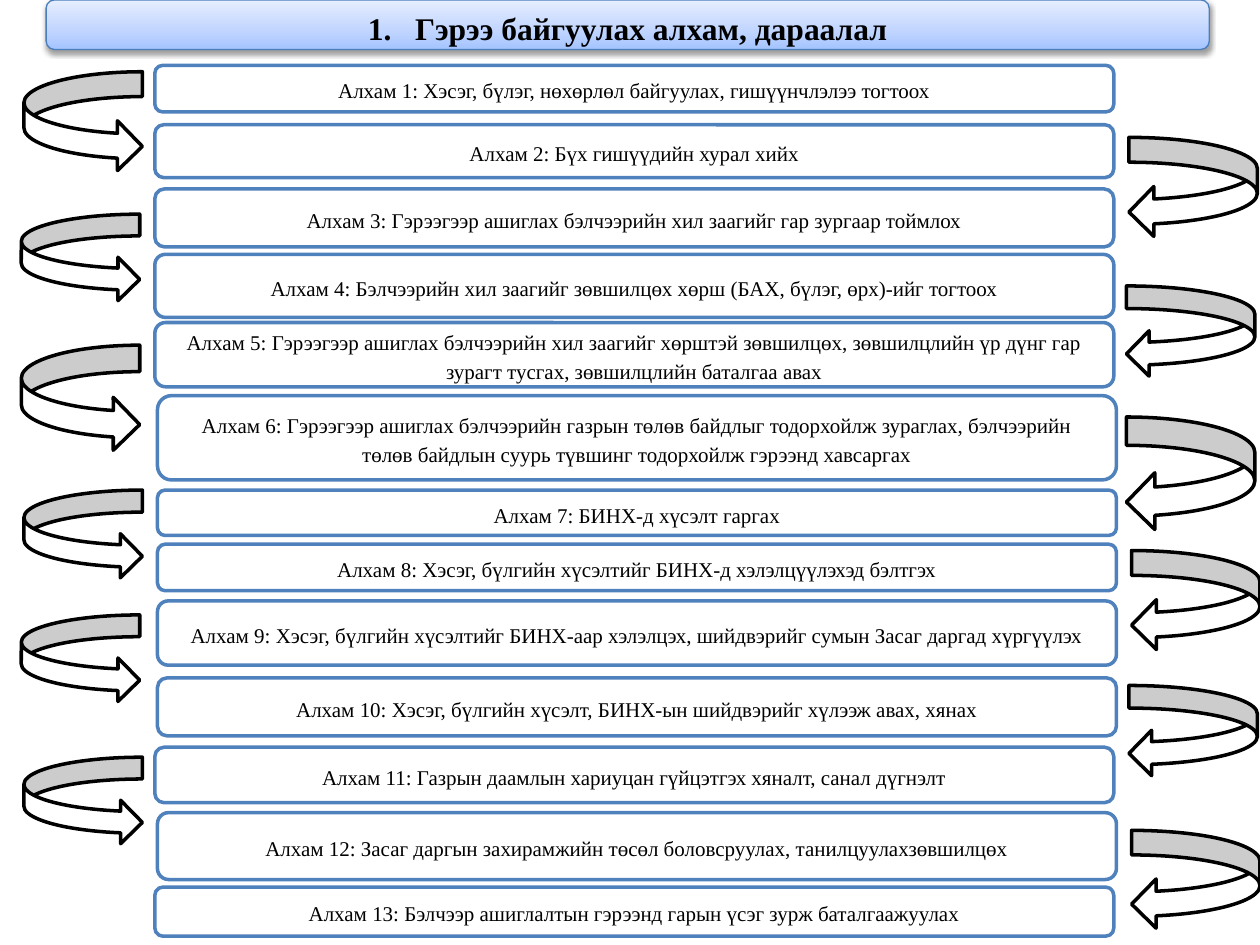
"""Build a slide with the thirteen steps of making a contract."""
from copy import deepcopy
from lxml.etree import SubElement
from pptx import Presentation
from pptx.dml.color import RGBColor
from pptx.enum.shapes import MSO_SHAPE
from pptx.enum.text import MSO_ANCHOR, PP_ALIGN
from pptx.oxml.ns import qn
from pptx.util import Pt

BLACK = RGBColor(0x00, 0x00, 0x00)
WHITE = RGBColor(0xFF, 0xFF, 0xFF)
STEP_BLUE = RGBColor(0x4F, 0x81, 0xBD)
TITLE_BLUE = RGBColor(0x4B, 0x7E, 0xBC)
TITLE_STOPS = [
    (0, RGBColor(0xA4, 0xC4, 0xFF)),
    (0.35, RGBColor(0xBF, 0xD4, 0xFF)),
    (1, RGBColor(0xE6, 0xEE, 0xFF)),
]

OUTER, INNER = 88.5, 90
STEP_WIDTH = 548
STEPS = [
    (OUTER, 37.4, 26.6, "Хэсэг, бүлэг, нөхөрлөл байгуулах, гишүүнчлэлээ тогтоох"),
    (OUTER, 71.3, 30.2, "Бүх гишүүдийн хурал хийх"),
    (OUTER, 108, 33.1, "Гэрээгээр ашиглах бэлчээрийн хил заагийг гар зургаар тоймлох"),
    (OUTER, 145.4, 36, "Бэлчээрийн хил заагийг зөвшилцөх хөрш (БАХ, бүлэг, өрх)-ийг тогтоох"),
    (OUTER, 184.3, 36.7, "Гэрээгээр ашиглах бэлчээрийн хил заагийг хөрштэй зөвшилцөх, "
     "зөвшилцлийн үр дүнг гар зурагт тусгах, зөвшилцлийн баталгаа авах"),
    (INNER, 226.1, 48.2, "Гэрээгээр ашиглах бэлчээрийн газрын төлөв байдлыг тодорхойлж зураглах, "
     "бэлчээрийн төлөв байдлын суурь түвшинг тодорхойлж гэрээнд хавсаргах"),
    (INNER, 280.1, 25.9, "БИНХ-д хүсэлт гаргах"),
    (INNER, 311, 26.6, "Хэсэг, бүлгийн хүсэлтийг БИНХ-д хэлэлцүүлэхэд бэлтгэх"),
    (INNER, 343.4, 36.7, "Хэсэг, бүлгийн хүсэлтийг БИНХ-аар хэлэлцэх, "
     "шийдвэрийг сумын Засаг даргад хүргүүлэх"),
    (INNER, 387.4, 33.1, "Хэсэг, бүлгийн хүсэлт, БИНХ-ын шийдвэрийг хүлээж авах, хянах"),
    (OUTER, 427, 31.7, "Газрын даамлын хариуцан гүйцэтгэх хяналт, санал дүгнэлт"),
    (INNER, 464.4, 38.2, "Засаг даргын захирамжийн төсөл боловсруулах, танилцуулахзөвшилцөх"),
    (OUTER, 506.9, 28.1, "Бэлчээр ашиглалтын гэрээнд гарын үсэг зурж баталгаажуулах"),
]
ARROWS = {
    (MSO_SHAPE.CURVED_RIGHT_ARROW, 67.7): [
        (13.7, 41, 56.9), (12.2, 122.4, 49.7), (12.2, 197.3, 60.5),
        (13.7, 280.1, 50.4), (12.2, 351.4, 49.7), (13.7, 432.7, 49.7),
    ],
    (MSO_SHAPE.CURVED_LEFT_ARROW, 73.4): [
        (645.1, 78.5, 56.9), (643.7, 163.4, 51.8), (643.7, 238.3, 64.8),
        (646.6, 314.6, 56.9), (645.1, 391.7, 51.8), (646.6, 474.5, 56.2),
    ],
}

deck = Presentation()
deck.slide_width, deck.slide_height = Pt(720), Pt(540)
page = deck.slides.add_slide(deck.slide_layouts[6])


def add_box(kind, left, top, width, height, line_color, line_width):
    box = page.shapes.add_shape(kind, Pt(left), Pt(top), Pt(width), Pt(height))
    box.shadow.inherit = False
    box.fill.solid()
    box.fill.fore_color.rgb = WHITE
    box.line.color.rgb = line_color
    box.line.width = Pt(line_width)
    return box


def write(box, text, size, bold=False):
    frame = box.text_frame
    frame.word_wrap = True
    frame.vertical_anchor = MSO_ANCHOR.MIDDLE
    para = frame.paragraphs[0]
    para.text = text
    para.alignment = PP_ALIGN.CENTER
    para.line_spacing = 1.15
    para.space_after = Pt(10)
    font = para.runs[0].font
    font.name, font.size, font.bold = "Times New Roman", Pt(size), bold
    font.color.rgb = BLACK
    return para


title = add_box(MSO_SHAPE.ROUNDED_RECTANGLE, 26.4, 0, 664.6, 28.3, TITLE_BLUE, 0.75)
title.fill.gradient()
title.fill.gradient_angle = 90
stop_list = title._element.spPr.find(qn("a:gradFill")).find(qn("a:gsLst"))
stop_list.insert(1, deepcopy(stop_list[0]))
for stop, (position, color) in zip(title.fill.gradient_stops, TITLE_STOPS):
    stop.position = position
    stop.color.rgb = color

effects = title._element.spPr.find(qn("a:effectLst"))
shadow = SubElement(effects, qn("a:outerShdw"), blurRad=str(Pt(3.1)), dist=str(Pt(1.6)),
                    dir="5400000", rotWithShape="0")
shadow_color = SubElement(shadow, qn("a:srgbClr"), val=str(BLACK))
SubElement(shadow_color, qn("a:alpha"), val="38000")

heading = write(title, "Гэрээ байгуулах алхам, дараалал", 18, bold=True)
properties = heading._p.get_or_add_pPr()
properties.set("marL", str(Pt(27)))
properties.set("indent", str(Pt(-27)))
SubElement(properties, qn("a:buFont"), typeface="Times New Roman")
SubElement(properties, qn("a:buAutoNum"), type="arabicPeriod")

for number, (left, top, height, text) in enumerate(STEPS, start=1):
    step = add_box(MSO_SHAPE.ROUNDED_RECTANGLE, left, top, STEP_WIDTH, height, STEP_BLUE, 2)
    write(step, f"Алхам {number}: {text}", 12)

for (kind, width), places in ARROWS.items():
    for left, top, height in places:
        add_box(kind, left, top, width, height, BLACK, 2)

deck.save("out.pptx")
